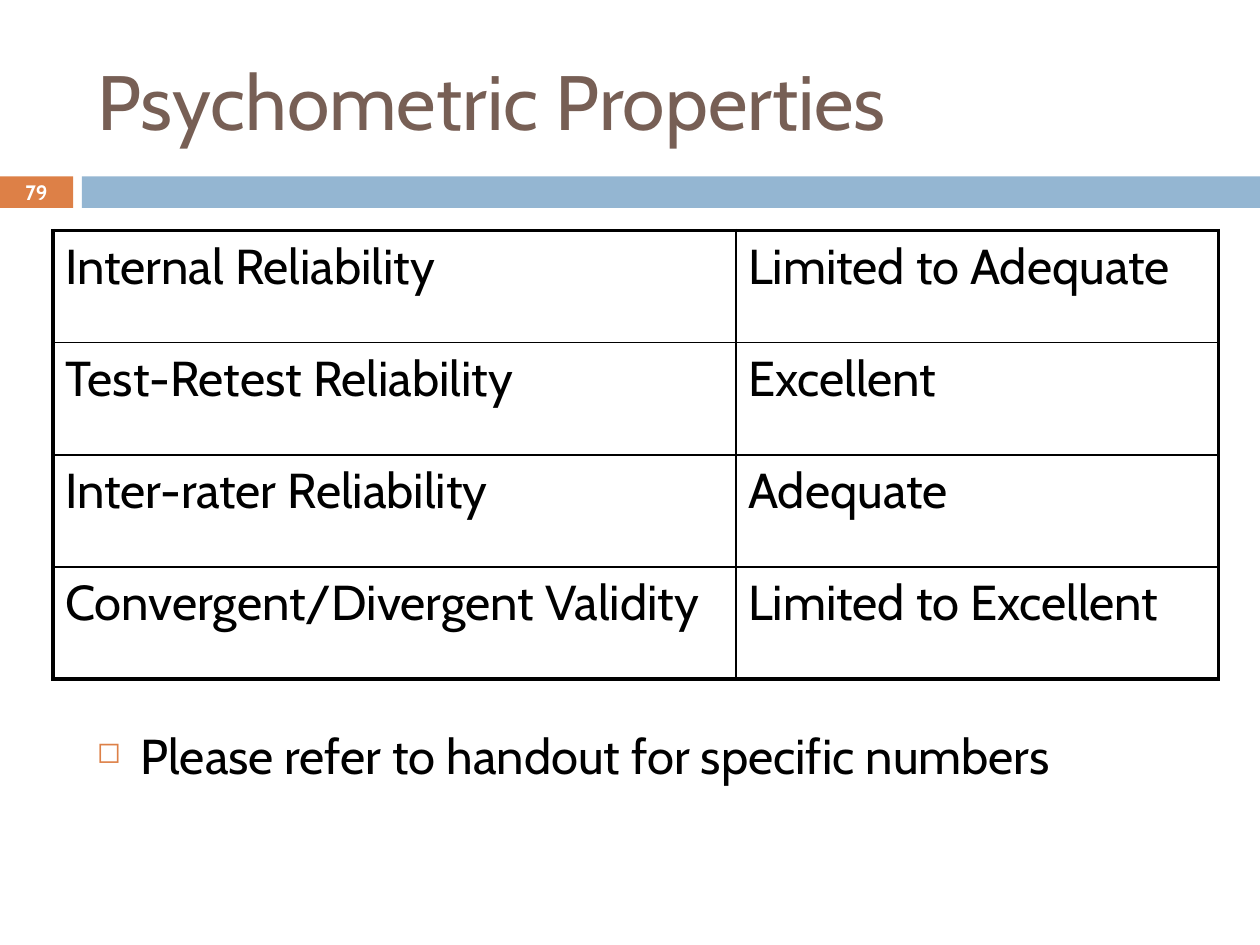
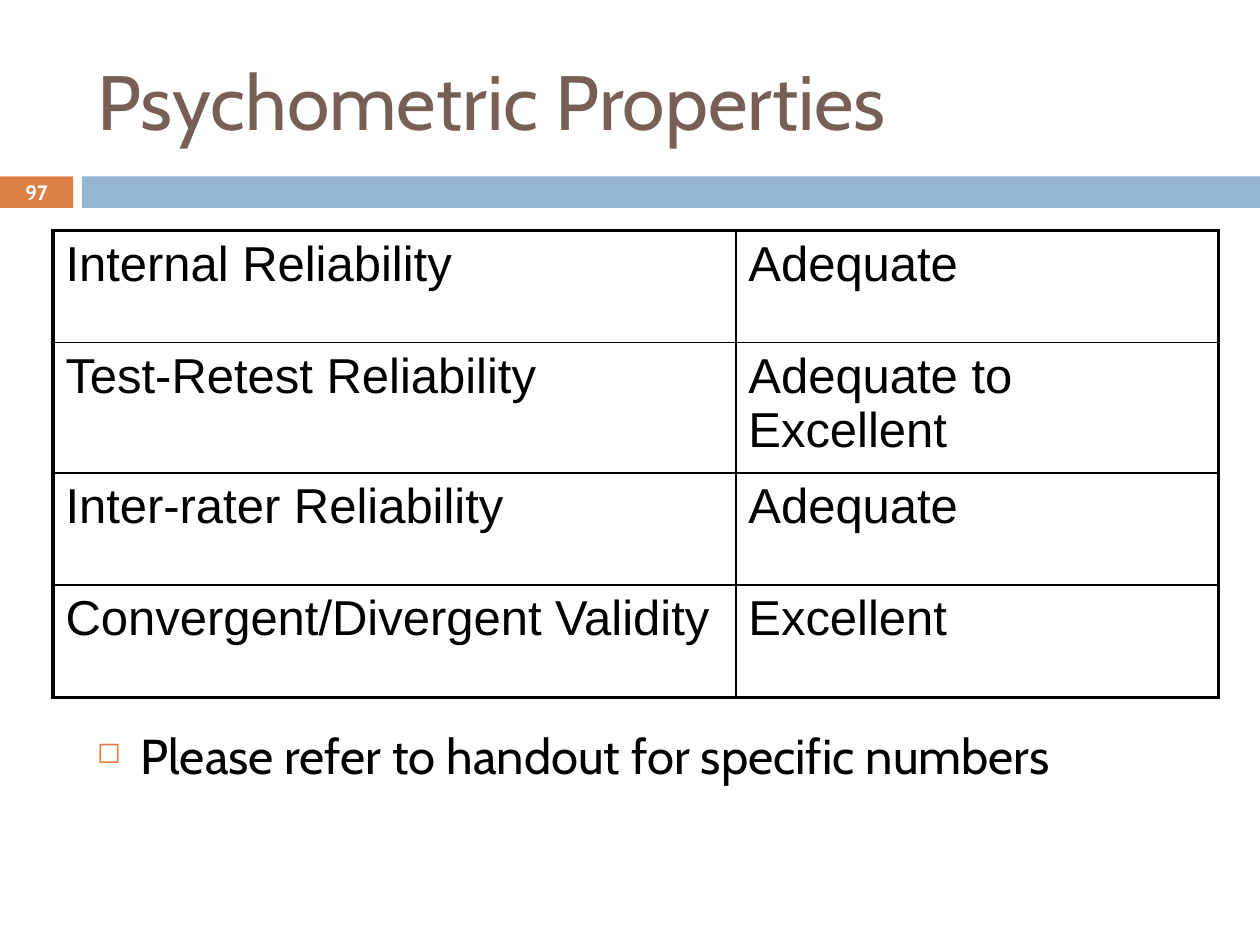
from dataclasses import dataclass

from lxml import etree
from pptx import Presentation
from pptx.dml.color import RGBColor
from pptx.enum import shapes, text
from pptx.oxml import ns
from pptx.util import Inches, Pt

# Content
TITLE = "Psychometric Properties"
NOTE = "Please refer to handout for specific numbers"
PROPERTIES = [
    "Internal Reliability",
    "Test-Retest Reliability",
    "Inter-rater Reliability",
    "Convergent/Divergent Validity",
]
PAGES = [
    {"number": "79", "table_font": "Cabin",
     "ratings": ["Limited to Adequate", "Excellent", "Adequate", "Limited to Excellent"]},
    {"number": "97", "table_font": "Arial",
     "ratings": ["Adequate", "Adequate to Excellent", "Adequate", "Excellent"]},
]


# Colours, type and line widths
@dataclass(frozen=True)
class Theme:
    orange: str = "DD8047"
    blue: str = "94B6D2"
    brown: str = "775F55"
    black: str = "000000"
    white: str = "FFFFFF"
    font: str = "Cabin"
    title_size: float = 44
    body_size: float = 28
    number_size: float = 11.9
    outer_line: float = 2.25
    inner_line: float = 1


THEME = Theme()

# Layout in inches: left, top, width, height
TITLE_AREA = (0.67, 0.25, 8.92, 1.08)
NUMBER_BAND = (0, 1.4, 0.58, 0.25)
WIDE_BAND = (0.65, 1.4, 9.35, 0.25)
NOTE_AREA = (0.67, 5.71, 8.92, 0.6)
TABLE_CORNER = (0.42, 1.83)
COLUMN_WIDTHS = (5.42, 3.83)
ROW_HEIGHT = 0.89
NOTE_INDENT = 0.35


def inches(area):
    return [Inches(length) for length in area]


def add_span(para, words, size, color, font=THEME.font, bold=False):
    span = para.add_run()
    span.text = words
    span.font.name = font
    span.font.size = Pt(size)
    span.font.bold = bold
    span.font.color.rgb = RGBColor.from_string(color)


def add_title(page):
    title = page.shapes.title
    title.left, title.top, title.width, title.height = inches(TITLE_AREA)
    frame = title.text_frame
    frame.auto_size = text.MSO_AUTO_SIZE.NONE
    frame.vertical_anchor = text.MSO_ANCHOR.MIDDLE
    para = frame.paragraphs[0]
    para.alignment = text.PP_ALIGN.LEFT
    add_span(para, TITLE, THEME.title_size, THEME.brown)


def add_band(page, area, color):
    band = page.shapes.add_shape(shapes.MSO_SHAPE.RECTANGLE, *inches(area))
    band.shadow.inherit = False
    band.fill.solid()
    band.fill.fore_color.rgb = RGBColor.from_string(color)
    band.line.fill.background()
    return band


def add_bands(page, number):
    add_band(page, WIDE_BAND, THEME.blue)
    frame = add_band(page, NUMBER_BAND, THEME.orange).text_frame
    frame.margin_top = frame.margin_bottom = 0
    frame.vertical_anchor = text.MSO_ANCHOR.MIDDLE
    para = frame.paragraphs[0]
    para.alignment = text.PP_ALIGN.CENTER
    add_span(para, number, THEME.number_size, THEME.white, bold=True)


def add_note(page):
    box = page.shapes.add_textbox(*inches(NOTE_AREA))
    box.text_frame.word_wrap = True
    para = box.text_frame.paragraphs[0]
    properties = para._p.get_or_add_pPr()
    properties.set("marL", str(Inches(NOTE_INDENT)))
    properties.set("indent", str(-Inches(NOTE_INDENT)))
    bullet_color = etree.SubElement(properties, ns.qn("a:buClr"))
    etree.SubElement(bullet_color, ns.qn("a:srgbClr"), val=THEME.orange)
    etree.SubElement(properties, ns.qn("a:buSzPct"), val="60000")
    etree.SubElement(properties, ns.qn("a:buChar"), char="◻")
    add_span(para, NOTE, THEME.body_size, THEME.black)


def set_borders(cell, outer_sides):
    """Draw all four cell edges, heavier along the outside of the table."""
    properties = cell._tc.get_or_add_tcPr()
    for side in "LRTB":
        width = THEME.outer_line if side in outer_sides else THEME.inner_line
        line = etree.SubElement(properties, ns.qn(f"a:ln{side}"), w=str(Pt(width)))
        fill = etree.SubElement(line, ns.qn("a:solidFill"))
        etree.SubElement(fill, ns.qn("a:srgbClr"), val=THEME.black)


def add_ratings_table(page, ratings, font):
    rows = list(zip(PROPERTIES, ratings))
    size = (sum(COLUMN_WIDTHS), ROW_HEIGHT * len(rows))
    table = page.shapes.add_table(
        len(rows), len(COLUMN_WIDTHS), *inches(TABLE_CORNER + size)).table
    table.first_row = table.horz_banding = False
    for column, width in zip(table.columns, COLUMN_WIDTHS):
        column.width = Inches(width)
    for row_index, row in enumerate(rows):
        table.rows[row_index].height = Inches(ROW_HEIGHT)
        for column_index, words in enumerate(row):
            cell = table.cell(row_index, column_index)
            outer_sides = "LR"[column_index]
            if row_index == 0:
                outer_sides += "T"
            if row_index == len(rows) - 1:
                outer_sides += "B"
            set_borders(cell, outer_sides)
            cell.fill.background()
            add_span(cell.text_frame.paragraphs[0], words,
                     THEME.body_size, THEME.black, font)


def main():
    deck = Presentation()
    deck.slide_width, deck.slide_height = Inches(10), Inches(7.5)
    title_only = deck.slide_layouts.get_by_name("Title Only")
    for content in PAGES:
        page = deck.slides.add_slide(title_only)
        add_title(page)
        add_bands(page, content["number"])
        add_note(page)
        add_ratings_table(page, content["ratings"], content["table_font"])
    deck.save("out.pptx")


if __name__ == "__main__":
    main()
